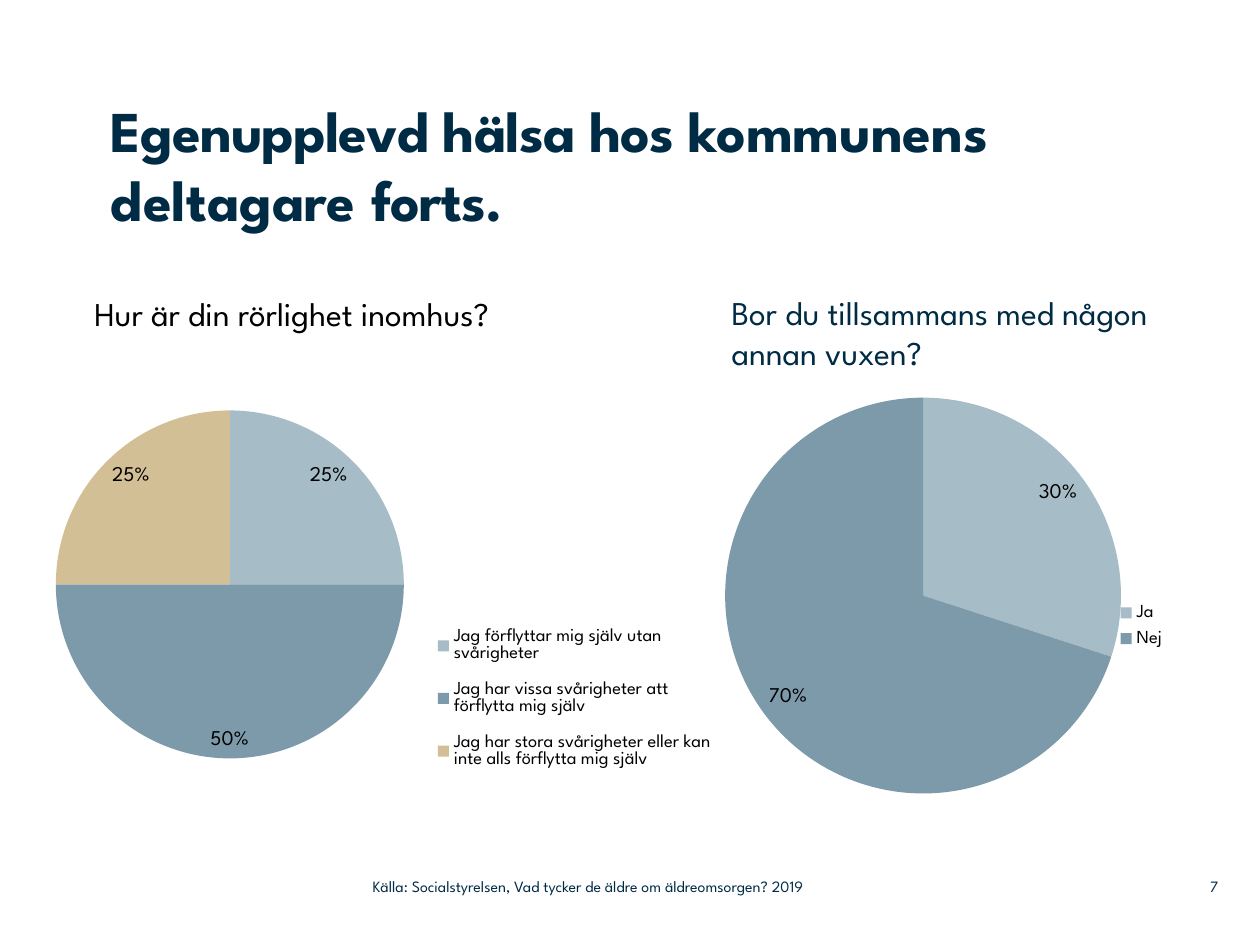
from lxml.etree import SubElement
from pptx import Presentation
from pptx.chart.data import CategoryChartData
from pptx.dml.color import RGBColor
from pptx.enum.chart import XL_CHART_TYPE, XL_LABEL_POSITION, XL_LEGEND_POSITION
from pptx.enum.text import MSO_ANCHOR, MSO_AUTO_SIZE, PP_ALIGN
from pptx.oxml.ns import qn
from pptx.util import Pt

NAVY = RGBColor(0x00, 0x2B, 0x45)
BLACK = RGBColor(0x00, 0x00, 0x00)
MIST = RGBColor(0xA6, 0xBC, 0xC6)
STEEL = RGBColor(0x7D, 0x9A, 0xAA)
SAND = RGBColor(0xD3, 0xBF, 0x96)
SLICE_COLORS = [MIST, STEEL, SAND]
FONT = "League Spartan"
NO_MARGINS = dict.fromkeys(
    ["margin_left", "margin_top", "margin_right", "margin_bottom"], 0)
CHART_SIZE = (390, 246)


def set_format(target, values):
    for key, value in values.items():
        setattr(target, key, value)


def set_font(font, size, color=BLACK, bold=False):
    set_format(font, {"name": FONT, "size": Pt(size), "bold": bold})
    font.color.rgb = color


def place(element, bounds):
    names = ["left", "top", "width", "height"]
    set_format(element, dict(zip(names, map(Pt, bounds))))


def add_title(slide, bounds, pieces):
    title = slide.shapes.title
    place(title, bounds)
    set_format(title.text_frame, {
        **NO_MARGINS, "word_wrap": True, "auto_size": MSO_AUTO_SIZE.NONE,
        "vertical_anchor": MSO_ANCHOR.TOP})
    paragraph = title.text_frame.paragraphs[0]
    paragraph.alignment = PP_ALIGN.LEFT
    for text, spacing in pieces:
        run = paragraph.add_run()
        run.text = text
        set_font(run.font, 33, NAVY, bold=True)
        run.font._element.set("spc", str(spacing))


def add_text(slide, bounds, text, size, color, frame_format, align=PP_ALIGN.LEFT):
    box = slide.shapes.add_textbox(*map(Pt, bounds))
    set_format(box.text_frame, {"word_wrap": True, **frame_format})
    paragraph = box.text_frame.paragraphs[0]
    paragraph.alignment = align
    run = paragraph.add_run()
    run.text = text
    set_font(run.font, size, color)


def set_layout(owner, fractions, inner=False):
    layout = owner.find(qn("c:layout"))
    if layout is None:
        layout = SubElement(owner, qn("c:layout"))
        anchor = owner.find(qn("c:legendPos"))
        if anchor is None:
            owner.insert(0, layout)
        else:
            anchor.addnext(layout)
    manual = SubElement(layout, qn("c:manualLayout"))
    settings = [("layoutTarget", "inner")] if inner else []
    settings += [("xMode", "edge"), ("yMode", "edge")]
    settings += zip("xywh", fractions)
    for tag, value in settings:
        SubElement(manual, qn(f"c:{tag}")).set("val", str(value))


def add_pie(slide, position, answers, plot_area, legend_area):
    data = CategoryChartData()
    data.categories = list(answers)
    data.add_series("Series 1", list(answers.values()))
    chart = slide.shapes.add_chart(
        XL_CHART_TYPE.PIE, *map(Pt, position + CHART_SIZE), data).chart
    set_format(chart, {"has_title": False, "has_legend": True})
    set_font(chart.font, 10)
    set_format(chart.legend, {
        "position": XL_LEGEND_POSITION.RIGHT, "include_in_layout": False})
    set_font(chart.legend.font, 10.5)
    plot = chart.plots[0]
    set_format(plot, {"vary_by_categories": True, "has_data_labels": True})
    set_format(plot.data_labels, {
        "show_percentage": True, "show_value": False,
        "number_format": "0%", "number_format_is_linked": False,
        "position": XL_LABEL_POSITION.INSIDE_END})
    set_font(plot.data_labels.font, 12)
    for index, color in enumerate(SLICE_COLORS[:len(answers)]):
        fill = plot.series[0].points[index].format.fill
        fill.solid()
        fill.fore_color.rgb = color
    set_layout(chart._chartSpace.chart.plotArea, plot_area, inner=True)
    set_layout(chart.legend._element, legend_area)


def main():
    presentation = Presentation()
    set_format(presentation, {"slide_width": Pt(720), "slide_height": Pt(540)})
    slide = presentation.slides.add_slide(presentation.slide_layouts[5])

    add_title(slide, (63.4, 54, 577.4, 102.2), [
        ("Egenupplevd hälsa hos ", -50),
        ("kommunens deltagare ", 0),
        ("forts.", -50)])

    footer = {**NO_MARGINS, "vertical_anchor": MSO_ANCHOR.MIDDLE}
    add_text(slide, (662.4, 496, 33.8, 21), "7", 9, NAVY, footer, PP_ALIGN.RIGHT)
    add_text(slide, (213, 496, 319, 21),
             "Källa: Socialstyrelsen, Vad tycker de äldre om äldreomsorgen? 2019",
             9, NAVY, footer)

    question = {"auto_size": MSO_AUTO_SIZE.SHAPE_TO_FIT_TEXT}
    add_text(slide, (46.8, 164.2, 293, 30.2),
             "Hur är din rörlighet inomhus?", 19, BLACK, question)
    add_text(slide, (411, 163.4, 267, 53.3),
             "Bor du tillsammans med någon annan vuxen?", 19, NAVY, question)

    add_pie(slide, (352, 217.4), {"Ja": 30, "Nej": 70},
            (0.16, 0.04, 0.58, 0.92), (0.73, 0.5, 0.08, 0.14))
    add_pie(slide, (20.2, 211), {
        "Jag förflyttar mig själv utan svårigheter": 25,
        "Jag har vissa svårigheter att förflytta mig själv": 50,
        "Jag har stora svårigheter eller kan inte alls förflytta mig själv": 25},
        (0.03, 0.09, 0.51, 0.82), (0.58, 0.56, 0.42, 0.41))

    presentation.save("out.pptx")


if __name__ == "__main__":
    main()
